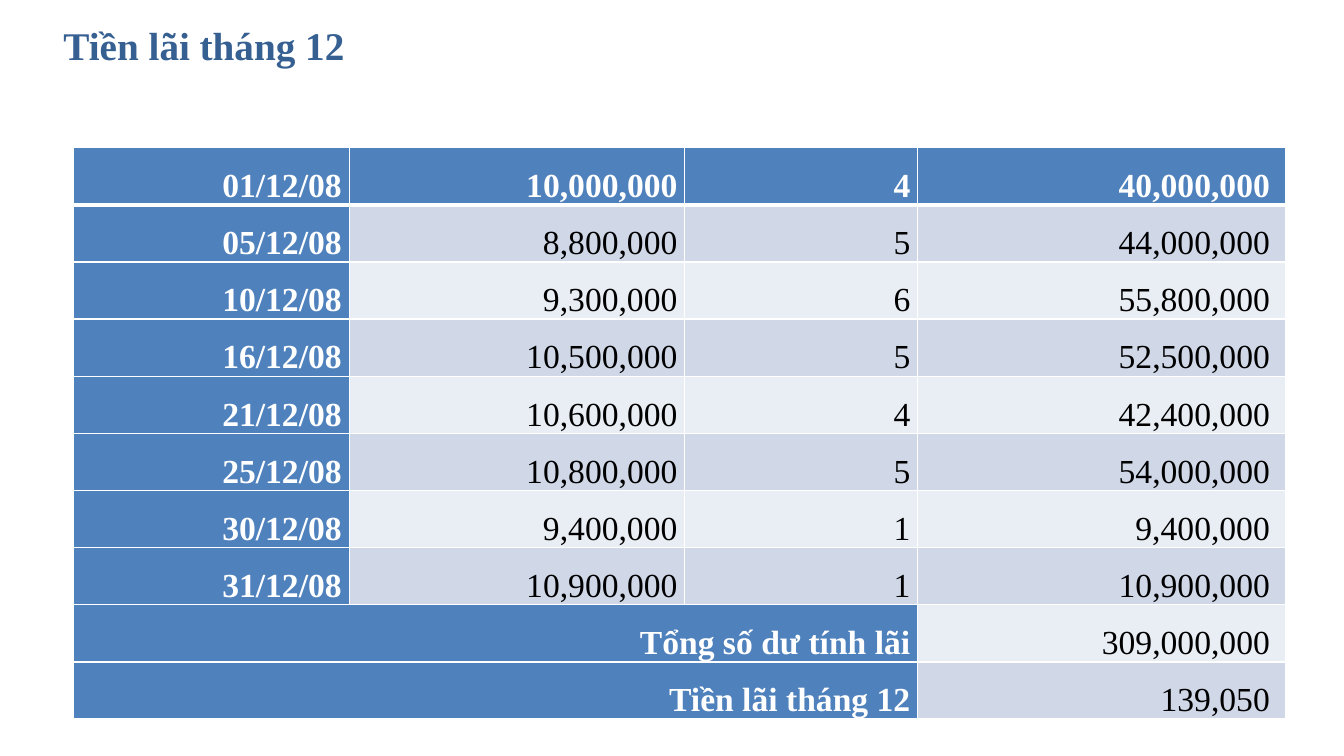
from typing import NamedTuple

from lxml import etree
from pptx import Presentation, util as u
from pptx.dml.color import RGBColor
from pptx.enum import text as t
from pptx.oxml.ns import qn

FONT = "Times New Roman"
WHITE, BLACK, NAVY, BLUE = "FFFFFF", "000000", "376092", "4F81BD"
BANDS = ("D0D8E8", "E9EDF4")
WIDTHS = (6.96, 8.46, 5.87, 9.27)
HEIGHT = 1.44
PAD, WIDE = 0.19, 0.4


class Row(NamedTuple):
    label: str
    money: str
    days: str
    total: str


ROWS = (
    Row("01/12/08", "10,000,000", "4", "40,000,000"),
    Row("05/12/08", "8,800,000", "5", "44,000,000"),
    Row("10/12/08", "9,300,000", "6", "55,800,000"),
    Row("16/12/08", "10,500,000", "5", "52,500,000"),
    Row("21/12/08", "10,600,000", "4", "42,400,000"),
    Row("25/12/08", "10,800,000", "5", "54,000,000"),
    Row("30/12/08", "9,400,000", "1", "9,400,000"),
    Row("31/12/08", "10,900,000", "1", "10,900,000"),
    Row("Tổng số dư tính lãi", "", "", "309,000,000"),
    Row("Tiền lãi tháng 12", "", "", "139,050"),
)


def color(code: str) -> RGBColor:
    return RGBColor.from_string(code)


def add_run(para, words: str, size: float, code: str, bold: bool) -> None:
    run = para.add_run()
    run.text = words
    font = run.font
    font.name, font.size, font.bold = FONT, u.Pt(size), bold
    font.color.rgb = color(code)


def add_edge(cell, side: str, width: float) -> None:
    """Draw one white cell border; call before the fill is set."""
    props = cell._tc.get_or_add_tcPr()
    line = etree.SubElement(props, qn(f"a:{side}"), w=str(u.Pt(width)))
    fill = etree.SubElement(line, qn("a:solidFill"))
    etree.SubElement(fill, qn("a:srgbClr"), val=WHITE)


def draw_cell(cell, words: str, row: int, col: int) -> None:
    thick = {(0, "lnB"), (1, "lnT")}
    for side in ("lnL", "lnR", "lnT", "lnB"):
        add_edge(cell, side, 3 if (row, side) in thick else 1)
    head = row == 0 or col == 0
    cell.fill.solid()
    cell.fill.fore_color.rgb = color(BLUE if head else BANDS[(row - 1) % 2])
    cell.margin_left = u.Cm(PAD)
    cell.margin_right = u.Cm(WIDE if col == len(WIDTHS) - 1 else PAD)
    cell.margin_top = cell.margin_bottom = 0
    cell.vertical_anchor = t.MSO_ANCHOR.BOTTOM
    para = cell.text_frame.paragraphs[0]
    para.alignment = t.PP_ALIGN.RIGHT
    para.line_spacing = 1.15
    if words:
        add_run(para, words, 24, WHITE if head else BLACK, head)


def draw_title(slide) -> None:
    box = slide.shapes.add_textbox(u.Cm(1.35), u.Cm(0.08), u.Cm(31.83), u.Cm(2.1))
    frame = box.text_frame
    frame.word_wrap = True
    frame.vertical_anchor = t.MSO_ANCHOR.MIDDLE
    add_run(frame.paragraphs[0], "Tiền lãi tháng 12", 28, NAVY, True)


def draw_table(slide) -> None:
    table = slide.shapes.add_table(
        len(ROWS), len(WIDTHS), u.Cm(1.84), u.Cm(3.72),
        u.Cm(sum(WIDTHS)), u.Cm(HEIGHT * len(ROWS))).table
    table.first_col = True
    for col, width in zip(table.columns, WIDTHS):
        col.width = u.Cm(width)
    for r, row in enumerate(ROWS):
        table.rows[r].height = u.Cm(HEIGHT)
        for c, words in enumerate(row):
            draw_cell(table.cell(r, c), words, r, c)
        if not row.days:
            table.cell(r, 0).merge(table.cell(r, 2))


def main() -> None:
    deck = Presentation()
    deck.slide_width, deck.slide_height = u.Cm(33.87), u.Cm(19.05)
    slide = deck.slides.add_slide(deck.slide_layouts[6])
    draw_title(slide)
    draw_table(slide)
    deck.save("out.pptx")


if __name__ == "__main__":
    main()
